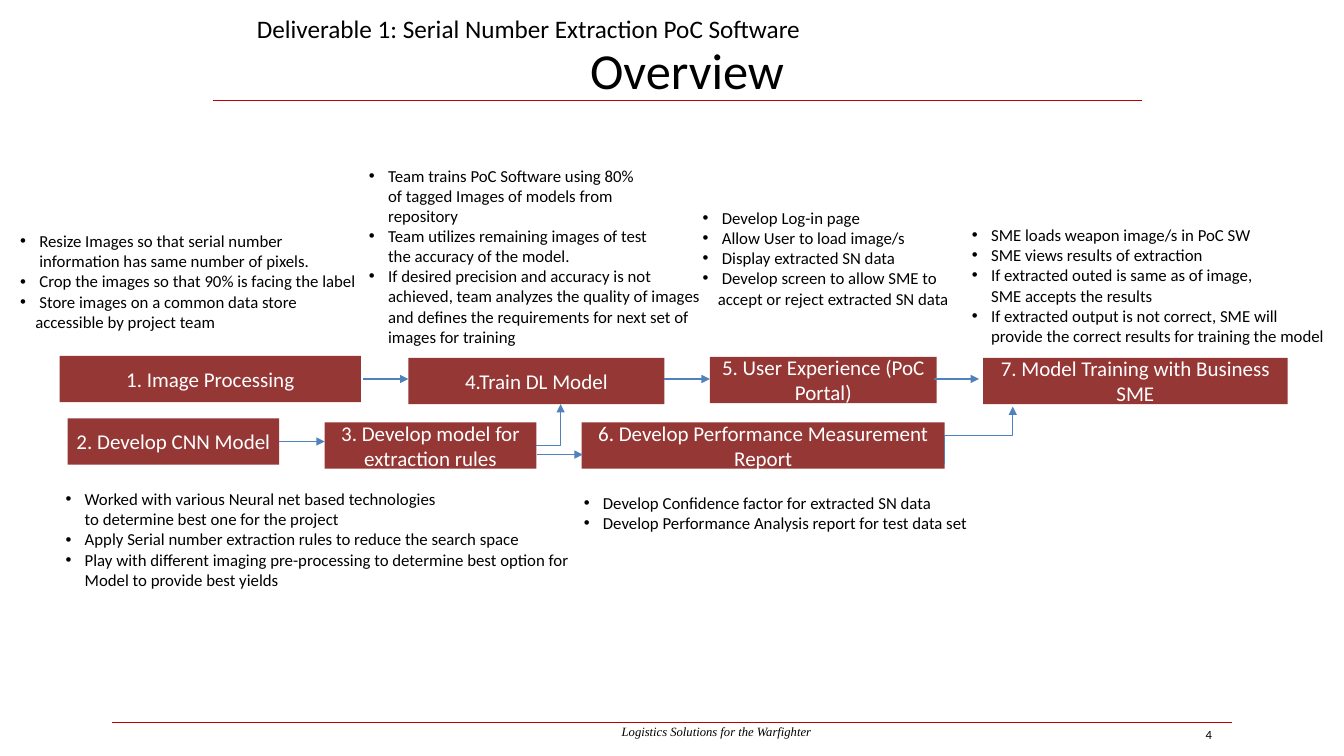
from lxml import etree
from pptx import Presentation
from pptx.dml.color import RGBColor
from pptx.enum import shapes, text
from pptx.oxml.ns import qn
from pptx.util import Inches, Pt

COLORS = {"ink": "000000", "paper": "FFFFFF", "rule": "C00000", "step": "953735", "arrow": "4F81BD"}
STEP_HEIGHT = 0.46
NOTE_INDENT = 0.19
SHALLOW_INDENT = 0.15
LEFT, CENTER, RIGHT = text.PP_ALIGN.LEFT, text.PP_ALIGN.CENTER, text.PP_ALIGN.RIGHT
TOP, MIDDLE, BOTTOM = text.MSO_ANCHOR.TOP, text.MSO_ANCHOR.MIDDLE, text.MSO_ANCHOR.BOTTOM

STEPS = [
    ("1. Image Processing", 0.59, 3.53, 2.99),
    ("2. Develop CNN Model", 0.67, 4.15, 2.1),
    ("3. Develop model for extraction rules", 3.22, 4.19, 2.1),
    ("4.Train DL Model", 4.05, 3.55, 2.54),
    ("5. User Experience (PoC Portal)", 7.04, 3.54, 2.25),
    ("6. Develop Performance Measurement Report", 5.77, 4.19, 3.6),
    ("7. Model Training with Business SME", 9.75, 3.55, 3.02),
]
ARROWS = [(2.77, 4.38), (3.6, 3.76), (6.59, 3.76), (5.33, 4.51), (9.26, 3.76)]
ARROW_LENGTH = 0.45
SHALLOW_LINES = {"accessible by project team", "accept or reject extracted SN data"}
NOTES = [
    ((0.14, 2.23, 3.59, 1.51), True, [
        "Resize Images so that serial number\ninformation has same number of pixels.",
        "Crop the images so that 90% is facing the label",
        "Store images on a common data store\naccessible by project team"]),
    ((6.91, 2, 3, 1.39), False, [
        "Develop Log-in page",
        "Allow User to load image/s",
        "Display extracted SN data",
        "Develop screen to allow SME to\naccept or reject extracted SN data"]),
    ((5.73, 4.83, 4.31, 1.03), False, [
        "Develop Confidence factor for extracted SN data",
        "Develop Performance Analysis report for test data set"]),
    ((9.58, 2.17, 3.7, 1.33), False, [
        "SME loads weapon image/s in PoC SW",
        "SME views results of extraction",
        "If extracted outed is same as of image,\nSME accepts the results",
        "If extracted output is not correct, SME will\nprovide the correct results for training the model"]),
    ((3.6, 1.58, 2.83, 0.64), True, [
        "Team trains PoC Software using 80%\nof tagged Images of models from\nrepository",
        "Team utilizes remaining images of test\nthe accuracy of the model.",
        "If desired precision and accuracy is not\nachieved, team analyzes the quality of images\n"
        "and defines the requirements for next set of\nimages for training"]),
    ((0.59, 4.79, 5.15, 1.5), False, [
        "Worked with various Neural net based technologies\nto determine best one for the project",
        "Apply Serial number extraction rules to reduce the search space",
        "Play with different imaging pre-processing to determine best option for\nModel to provide best yields"]),
]


def color(name):
    return RGBColor.from_string(COLORS[name])


def apply(target, values):
    for name, value in values.items():
        setattr(target, name, value)


def set_insets(frame, inset):
    apply(frame, {f"margin_{side}": Inches(inset) for side in ("left", "right", "top", "bottom")})


def write(para, words, size, ink="ink", align=LEFT, font="Calibri", italic=False):
    para.alignment = align
    span = para.add_run()
    span.text = words
    apply(span.font, {"size": Pt(size), "name": font, "italic": italic})
    span.font.color.rgb = color(ink)


def add_label(page, place, words, size, anchor=TOP, **style):
    box = page.shapes.add_textbox(*map(Inches, place))
    apply(box.text_frame, {"word_wrap": True, "vertical_anchor": anchor})
    write(box.text_frame.paragraphs[0], words, size, **style)


def add_rectangle(page, place):
    box = page.shapes.add_shape(shapes.MSO_SHAPE.RECTANGLE, *map(Inches, place))
    box.shadow.inherit = False
    return box


def add_step(page, words, left, top, width):
    box = add_rectangle(page, (left, top, width, STEP_HEIGHT))
    box.fill.solid()
    box.fill.fore_color.rgb = color("step")
    box.line.fill.background()
    set_insets(box.text_frame, 0.06)
    apply(box.text_frame, {"word_wrap": True, "vertical_anchor": MIDDLE})
    write(box.text_frame.paragraphs[0], words, 15, "paper", CENTER)


def indent(para, bulleted, depth):
    props = para._p.get_or_add_pPr()
    props.set("marL", str(Inches(depth)))
    props.set("indent", str(-Inches(depth) if bulleted else 0))
    if bulleted:
        etree.SubElement(props, qn("a:buFont")).set("typeface", "Arial")
        etree.SubElement(props, qn("a:buChar")).set("char", "•")
    else:
        etree.SubElement(props, qn("a:buNone"))


def add_note(page, place, framed, items):
    if framed:
        box = add_rectangle(page, place)
        box.fill.background()
        box.line.color.rgb = color("paper")
        box.line.width = Pt(0.75)
    else:
        box = page.shapes.add_textbox(*map(Inches, place))
    frame = box.text_frame
    set_insets(frame, 0.06)
    apply(frame, {"word_wrap": False, "vertical_anchor": TOP})
    lines = [(row == 0, words) for item in items for row, words in enumerate(item.split("\n"))]
    for number, (bulleted, words) in enumerate(lines):
        para = frame.add_paragraph() if number else frame.paragraphs[0]
        indent(para, bulleted, SHALLOW_INDENT if words in SHALLOW_LINES else NOTE_INDENT)
        write(para, words, 12)


def add_line(page, start, end, ink, kind=shapes.MSO_CONNECTOR.STRAIGHT):
    line = page.shapes.add_connector(kind, *map(Inches, start + end))
    line.line.color.rgb = color(ink)
    line.line.width = Pt(1)
    etree.SubElement(line._element.spPr, qn("a:effectLst"))
    return line


def add_arrow(page, start, end, kind=shapes.MSO_CONNECTOR.STRAIGHT):
    arrow = add_line(page, start, end, "arrow", kind)
    etree.SubElement(arrow.line._get_or_add_ln(), qn("a:tailEnd")).set("type", "triangle")
    return arrow


def add_elbows(page):
    elbow = shapes.MSO_CONNECTOR.ELBOW
    to_training = add_arrow(page, (5.32, 4.42), (5.56, 4.01), elbow)
    to_training._element.spPr.find(qn("a:prstGeom")).set("prst", "bentConnector2")
    to_business = add_arrow(page, (9.99, 4.66), (9.42, 3.98), elbow)
    to_business._element.spPr.find(qn("a:xfrm")).set("rot", str(90 * 60000))


def main():
    deck = Presentation()
    apply(deck, {"slide_width": Inches(13.33), "slide_height": Inches(7.5)})
    page = deck.slides.add_slide(deck.slide_layouts[6])
    add_label(page, (4.44, 7.13, 5.33, 0.25), "Logistics Solutions for the Warfighter", 9,
              align=CENTER, font="Times New Roman", italic=True)
    add_label(page, (11.56, 7.16, 0.56, 0.25), "4", 9, align=RIGHT)
    add_line(page, (1.11, 7.17), (12.22, 7.17), "rule")
    add_line(page, (2.11, 1), (11.33, 1), "rule")
    add_label(page, (1.24, 0.46, 11.15, 0.58), "Overview", 36, anchor=BOTTOM, align=CENTER)
    add_label(page, (2.45, 0.08, 11.15, 0.19), "Deliverable 1: Serial Number Extraction PoC Software", 18)
    for note in NOTES:
        add_note(page, *note)
    for step in STEPS:
        add_step(page, *step)
    for left, top in ARROWS:
        add_arrow(page, (left, top), (left + ARROW_LENGTH, top))
    add_elbows(page)
    deck.save("out.pptx")


if __name__ == "__main__":
    main()
